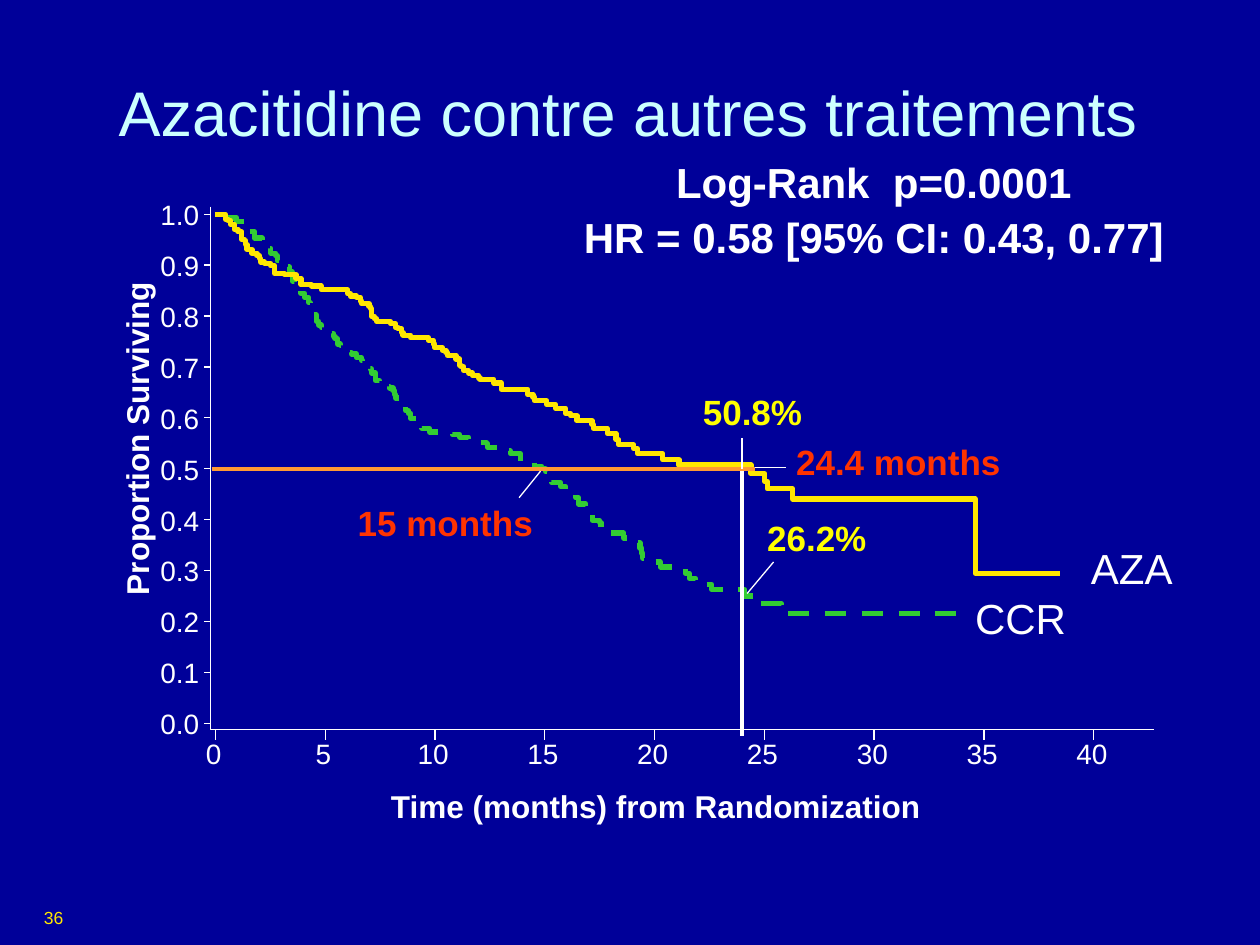
from collections import namedtuple

from lxml.etree import SubElement
from pptx import Presentation
from pptx.dml.color import RGBColor
from pptx.enum.dml import MSO_LINE_DASH_STYLE as Dash
from pptx.enum.shapes import MSO_CONNECTOR as Connector
from pptx.enum.text import MSO_ANCHOR as Anchor, PP_ALIGN as Align
from pptx.oxml.ns import qn
from pptx.util import Cm, Pt

Box = namedtuple("Box", "left top width height")

COLORS = {
    "background": "000099", "title": "CCFFFF", "text": "FFFFFF",
    "aza": "FFE701", "ccr": "33CC33", "median": "FF9933",
    "months": "FF3300", "percent": "FFFF00",
}
FONT = "Arial"
CM_PER_UNIT = 2.54
MONTHS = range(0, 41, 5)
TENTHS = range(11)

# Each pair is the place of a drop and the new level, in hundredths of a unit.
AZA_DROPS = [
    (0, 0), (8, 4), (10, 5), (12, 8), (15, 12), (18, 14), (21, 20), (23, 21),
    (24, 24), (25, 28), (29, 31), (33, 33), (35, 35), (36, 38), (39, 39),
    (44, 41), (47, 47), (55, 48), (64, 51), (68, 56), (76, 57), (84, 60),
    (105, 63), (107, 65), (112, 66), (115, 69), (116, 71), (122, 73),
    (123, 75), (124, 81), (126, 83), (128, 85), (139, 87), (143, 90),
    (145, 91), (148, 94), (149, 96), (155, 98), (169, 100), (173, 103),
    (174, 106), (180, 108), (183, 110), (184, 112), (191, 115), (194, 120),
    (195, 121), (197, 124), (201, 126), (204, 128), (209, 130), (210, 131),
    (221, 134), (227, 139), (248, 143), (252, 145), (253, 148), (263, 151),
    (270, 154), (278, 158), (282, 160), (287, 164), (299, 167), (300, 170),
    (311, 174), (318, 179), (320, 183), (332, 186), (335, 190), (355, 195),
    (368, 199), (425, 206), (436, 212), (438, 218), (458, 226), (603, 285),
    (670, 285),
]
CCR_DROPS = [
    (9, 3), (17, 6), (23, 7), (25, 9), (26, 14), (31, 19), (37, 23), (41, 27),
    (44, 31), (48, 33), (49, 37), (53, 39), (57, 42), (59, 46), (61, 53),
    (63, 57), (67, 59), (68, 63), (71, 66), (74, 70), (75, 75), (76, 79),
    (78, 80), (80, 85), (82, 88), (84, 90), (89, 93), (92, 95), (94, 97),
    (95, 99), (97, 103), (99, 104), (101, 106), (105, 110), (108, 111),
    (112, 114), (116, 116), (117, 118), (120, 122), (123, 123), (124, 126),
    (127, 132), (130, 133), (132, 137), (138, 138), (141, 140), (142, 143),
    (143, 146), (147, 148), (149, 149), (151, 156), (153, 158), (155, 162),
    (160, 165), (162, 167), (164, 170), (170, 173), (188, 175), (194, 177),
    (201, 181), (215, 182), (216, 185), (231, 188), (234, 190), (242, 196),
    (252, 197), (253, 200), (259, 202), (262, 204), (265, 207), (266, 210),
    (267, 213), (274, 216), (278, 219), (283, 222), (286, 225), (288, 230),
    (294, 232), (296, 236), (298, 238), (299, 243), (305, 245), (306, 253),
    (324, 257), (328, 261), (337, 265), (338, 269), (339, 273), (340, 276),
    (353, 280), (373, 285), (376, 289), (381, 294), (394, 298), (420, 303),
    (432, 309), (449, 317), (593, 317),
]


def length(units):
    return Cm(units * CM_PER_UNIT)


def color(name):
    return RGBColor.from_string(COLORS[name])


def format_paragraph(paragraph, size, ink, bold, align):
    paragraph.alignment = align
    font = paragraph.font
    font.name, font.size, font.bold = FONT, Pt(size), bold
    font.color.rgb = color(ink)


def add_label(slide, box, lines, size, ink="text", bold=False,
              align=Align.CENTER, spacing=None, wrap=False):
    label = slide.shapes.add_textbox(*map(length, box))
    frame = label.text_frame
    frame.word_wrap = wrap
    frame.text = lines
    for paragraph in frame.paragraphs:
        format_paragraph(paragraph, size, ink, bold, align)
        paragraph.line_spacing = spacing
    return label


def add_rule(slide, start, end, ink="text", weight=0.75):
    rule = slide.shapes.add_connector(
        Connector.STRAIGHT, *map(length, (*start, *end)))
    rule.line.color.rgb = color(ink)
    rule.line.width = Pt(weight)
    SubElement(rule._element.spPr, qn("a:effectLst"))


def add_outline(slide, points, ink, weight, dash=None):
    corners = [(length(x), length(y)) for x, y in points]
    builder = slide.shapes.build_freeform(*corners[0])
    builder.add_line_segments(corners[1:], close=False)
    outline = builder.convert_to_shape()
    outline.fill.background()
    outline.shadow.inherit = False
    outline.line.color.rgb = color(ink)
    outline.line.width = Pt(weight)
    if dash:
        outline.line.dash_style = dash


def place_title(slide, box):
    title = slide.shapes.title
    title.left, title.top, title.width, title.height = map(length, box)
    title.text_frame.text = "Azacitidine contre autres traitements"
    title.text_frame.vertical_anchor = Anchor.MIDDLE
    format_paragraph(title.text_frame.paragraphs[0], 36, "title", False, Align.CENTER)


def draw_axes(slide, plot):
    axis_x, axis_y = plot.left - 0.04, plot.top + plot.height + 0.05
    add_outline(slide, [(axis_x, plot.top - 0.06), (axis_x, axis_y),
                        (plot.left + 7.45, axis_y)], "text", 0.75)
    for tenth in TENTHS:
        y = plot.top + plot.height * (1 - tenth / 10)
        add_rule(slide, (axis_x - 0.05, y), (axis_x, y))
        add_label(slide, Box(axis_x - 0.5, y - 0.18, 0.51, 0.37),
                  f"{tenth / 10:.1f}", 16, align=Align.RIGHT)
    for month in MONTHS:
        x = plot.left + plot.width * month / MONTHS[-1]
        add_rule(slide, (x, axis_y + 0.08), (x, axis_y))
        add_label(slide, Box(x - 0.24, axis_y + 0.01, 0.45, 0.37), str(month), 16)
    add_label(slide, Box(plot.left + 1.27, axis_y + 0.41, 4.45, 0.4),
              "Time (months) from Randomization", 18, bold=True)
    proportion = add_label(slide, Box(plot.left - 1.98, plot.top + 1.58, 2.71, 0.4),
                           "Proportion Surviving", 18, bold=True)
    proportion.rotation = 270


def draw_survival(slide, plot, drops, ink, dash=None):
    places = [(plot.left + x / 100, plot.top + y / 100) for x, y in drops]
    steps = places[:1]
    for x, y in places[1:]:
        steps += [(x, steps[-1][1]), (x, y)]
    add_outline(slide, steps, ink, 3, dash)


def annotate(slide, plot):
    def at(x, y):
        return plot.left + x, plot.top + y

    rules = [
        ((-0.03, 2.02), (4.28, 2.02), "median", 2.25),
        ((2.58, 2.04), (2.41, 2.25), "text", 0.75),
        ((4.28, 2.01), (4.53, 2.01), "text", 0.75),
        ((4.18, 4.14), (4.18, 2.04), "text", 2.25),
        ((4.22, 3.01), (4.43, 2.76), "text", 0.75),
        ((4.18, 2.02), (4.18, 1.78), "text", 0.75),
    ]
    for start, end, ink, weight in rules:
        add_rule(slide, at(*start), at(*end), ink, weight)

    labels = [
        ("CCR", 5.93, 2.95, 0.93, 0.51, 24, "text"),
        ("AZA", 6.85, 2.56, 0.88, 0.51, 24, "text"),
        ("24.4 months", 4.51, 1.75, 1.84, 0.44, 20, "months"),
        ("15 months", 1.03, 2.23, 1.6, 0.44, 20, "months"),
        ("50.8%", 3.77, 1.35, 1, 0.44, 20, "percent"),
        ("26.2%", 4.28, 2.35, 1, 0.44, 20, "percent"),
    ]
    for words, x, y, width, height, size, ink in labels:
        add_label(slide, Box(*at(x, y), width, height), words, size, ink,
                  bold=ink != "text", align=Align.LEFT)


def main():
    deck = Presentation()
    deck.slide_width, deck.slide_height = length(10), length(7.5)
    slide = deck.slides.add_slide(deck.slide_layouts[5])
    slide.background.fill.solid()
    slide.background.fill.fore_color.rgb = color("background")

    plot = Box(1.71, 1.7, 6.97, 4.04)
    add_label(slide, Box(0.25, 7.15, 0.5, 0.25), "36", 10, "aza",
              align=Align.LEFT, wrap=True)
    place_title(slide, Box(0.37, 0.42, 9.23, 0.92))
    add_label(slide, Box(4.49, 1.15, 4.89, 1),
              "Log-Rank  p=0.0001\nHR = 0.58 [95% CI: 0.43, 0.77]",
              24, bold=True, spacing=1.1)
    draw_axes(slide, plot)
    draw_survival(slide, plot, CCR_DROPS, "ccr", Dash.DASH)
    draw_survival(slide, plot, AZA_DROPS, "aza")
    annotate(slide, plot)
    deck.save("out.pptx")


if __name__ == "__main__":
    main()
